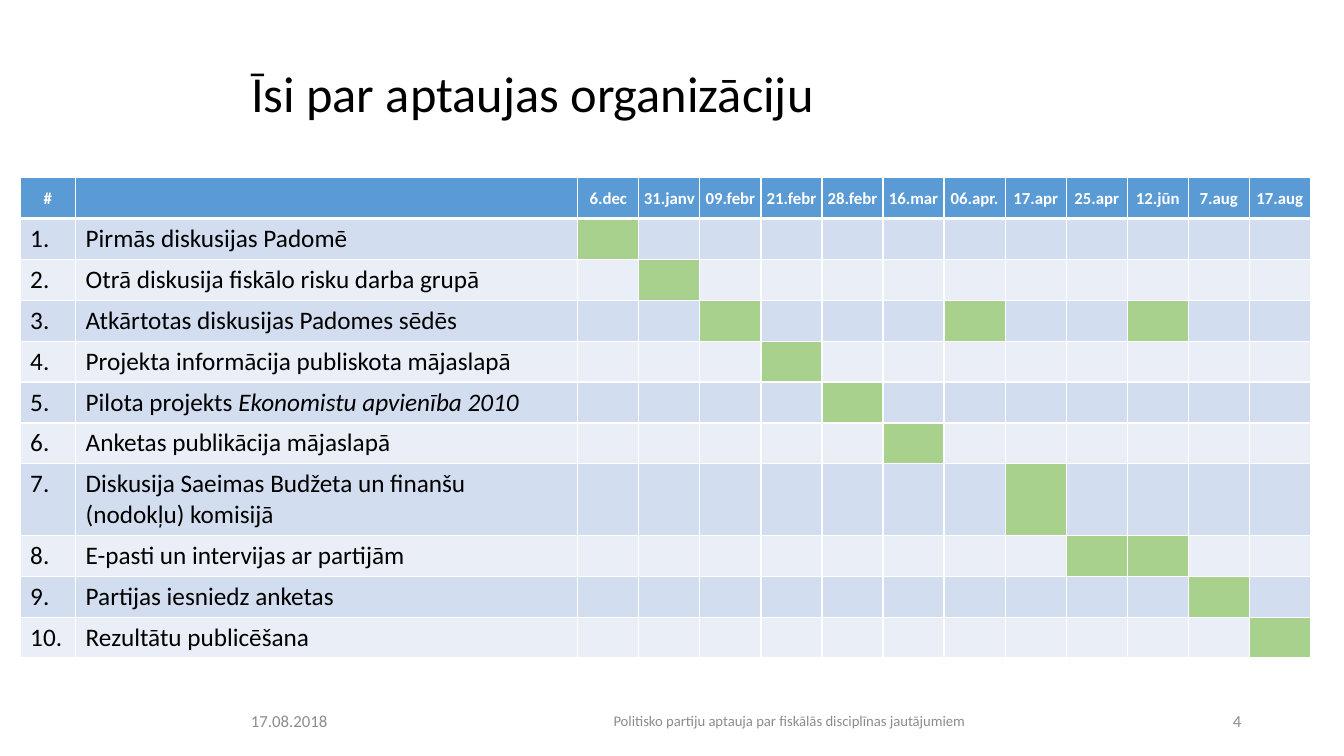
from dataclasses import dataclass

from pptx import Presentation
from pptx.dml.color import RGBColor as Color
from pptx.enum.text import MSO_ANCHOR as Anchor, PP_ALIGN as Align
from pptx.oxml import parse_xml
from pptx.oxml.ns import nsdecls
from pptx.util import Inches, Pt

DATES = ["6.dec", "31.janv", "09.febr", "21.febr", "28.febr", "16.mar",
         "06.apr.", "17.apr", "25.apr", "12.jūn", "7.aug", "17.aug"]

TASKS = [
    ("Pirmās diskusijas Padomē", "", ["6.dec"]),
    ("Otrā diskusija fiskālo risku darba grupā", "", ["31.janv"]),
    ("Atkārtotas diskusijas Padomes sēdēs", "", ["09.febr", "06.apr.", "12.jūn"]),
    ("Projekta informācija publiskota mājaslapā", "", ["21.febr"]),
    ("Pilota projekts ", "Ekonomistu apvienība 2010", ["28.febr"]),
    ("Anketas publikācija mājaslapā", "", ["16.mar"]),
    ("Diskusija Saeimas Budžeta un finanšu (nodokļu) komisijā", "", ["17.apr"]),
    ("E-pasti un intervijas ar partijām", "", ["25.apr", "12.jūn"]),
    ("Partijas iesniedz anketas", "", ["7.aug"]),
    ("Rezultātu publicēšana", "", ["17.aug"]),
]


@dataclass(frozen=True)
class Theme:
    """Colours, font and type sizes of the slide."""
    font: str = "Calibri"
    ink: str = "000000"
    paper: str = "FFFFFF"
    muted: str = "8C8C8C"
    header: str = "5B9BD5"
    bands: tuple = ("D2DEEF", "EAEFF7")
    marked: str = "A9D18E"
    title_size: float = 36
    body_size: float = 18
    small_size: float = 12
    footer_size: float = 10.5


class SchedulePage:
    """Draws on one slide, with lengths in percent of the slide's size."""

    def __init__(self, deck, theme):
        """Add a title-only slide to the deck."""
        self.deck, self.theme = deck, theme
        self.page = deck.slides.add_slide(deck.slide_layouts[5])

    def across(self, share):
        """Convert a share of the slide's width."""
        return round(self.deck.slide_width * share / 100)

    def down(self, share):
        """Convert a share of the slide's height."""
        return round(self.deck.slide_height * share / 100)

    def style(self, para, size, color, align=Align.LEFT, bold=False):
        """Set alignment and font of a paragraph."""
        para.alignment = align
        font = para.font
        font.name, font.size, font.bold = self.theme.font, Pt(size), bold
        font.color.rgb = Color.from_string(color)

    def title(self, text, left, top, width, height):
        """Fill and place the title placeholder."""
        box = self.page.shapes.title
        box.left, box.top = self.across(left), self.down(top)
        box.width, box.height = self.across(width), self.down(height)
        frame = box.text_frame
        frame.text, frame.word_wrap = text, True
        frame.vertical_anchor = Anchor.MIDDLE
        frame.paragraphs[0].line_spacing = 0.9
        self.style(frame.paragraphs[0], self.theme.title_size, self.theme.ink)

    def footer(self, text, left, width, size, align):
        """Add one text of the footer line."""
        box = self.page.shapes.add_textbox(
            self.across(left), self.down(92.67), self.across(width), self.down(5.33))
        frame = box.text_frame
        frame.text, frame.word_wrap = text, True
        frame.vertical_anchor = Anchor.MIDDLE
        self.style(frame.paragraphs[0], size, self.theme.muted, align)

    def paint(self, cell, fill, bottom=1):
        """Give a cell its borders and fill."""
        properties = cell._tc.get_or_add_tcPr()
        for side, points in (("L", 1), ("R", 1), ("T", 1), ("B", bottom)):
            properties.append(parse_xml(
                f'<a:ln{side} {nsdecls("a")} w="{Pt(points)}"><a:solidFill>'
                f'<a:srgbClr val="{self.theme.paper}"/></a:solidFill></a:ln{side}>'))
        cell.fill.solid()
        cell.fill.fore_color.rgb = Color.from_string(fill)

    def heading(self, cell, text):
        """Write a header cell."""
        self.paint(cell, self.theme.header, bottom=3)
        if text:
            cell.text, cell.vertical_anchor = text, Anchor.MIDDLE
            cell.margin_left = cell.margin_right = cell.margin_top = Inches(0.01)
            cell.margin_bottom = 0
            self.style(cell.text_frame.paragraphs[0], self.theme.small_size,
                       self.theme.paper, Align.CENTER, bold=True)

    def entry(self, cell, text, emphasis=""):
        """Write a body cell, with an optional italic ending."""
        cell.text = text
        para = cell.text_frame.paragraphs[0]
        if emphasis:
            span = para.add_run()
            span.text, span.font.italic = emphasis, True
        self.style(para, self.theme.body_size, self.theme.ink)

    def schedule(self, dates, tasks, left, top, width, row_height):
        """Add the table of tasks against dates."""
        number_width, task_width = 4.13, 37.36
        date_width = (width - number_width - task_width) / len(dates)
        table = self.page.shapes.add_table(
            len(tasks) + 1, len(dates) + 2, self.across(left), self.down(top),
            self.across(width), self.down(row_height * (len(tasks) + 1))).table
        widths = [number_width, task_width] + [date_width] * len(dates)
        for column, share in zip(table.columns, widths):
            column.width = self.across(share)
        for cell, text in zip(table.rows[0].cells, ["#", ""] + dates):
            self.heading(cell, text)
        for number, (text, emphasis, marked) in enumerate(tasks, 1):
            band = self.theme.bands[(number - 1) % 2]
            cells = list(table.rows[number].cells)
            for cell, date in zip(cells, [None, None] + dates):
                self.paint(cell, self.theme.marked if date in marked else band)
            self.entry(cells[0], f"{number}.")
            self.entry(cells[1], text, emphasis)


def main():
    """Build and save the slide."""
    deck = Presentation()
    deck.slide_width, deck.slide_height = Inches(13.33), Inches(7.5)
    theme = Theme()
    page = SchedulePage(deck, theme)
    page.title("Īsi par aptaujas organizāciju", 17.93, 5.33, 75.17, 14.8)
    page.schedule(DATES, TASKS, left=1.5, top=23.5, width=96.02, row_height=5.4)
    page.footer("17.08.2018", 17.93, 12.3, theme.small_size, Align.LEFT)
    page.footer("Politisko partiju aptauja par fiskālās disciplīnas jautājumiem",
                32.33, 52.81, theme.footer_size, Align.CENTER)
    page.footer("4", 87.17, 5.93, theme.small_size, Align.RIGHT)
    deck.save("out.pptx")


if __name__ == "__main__":
    main()
